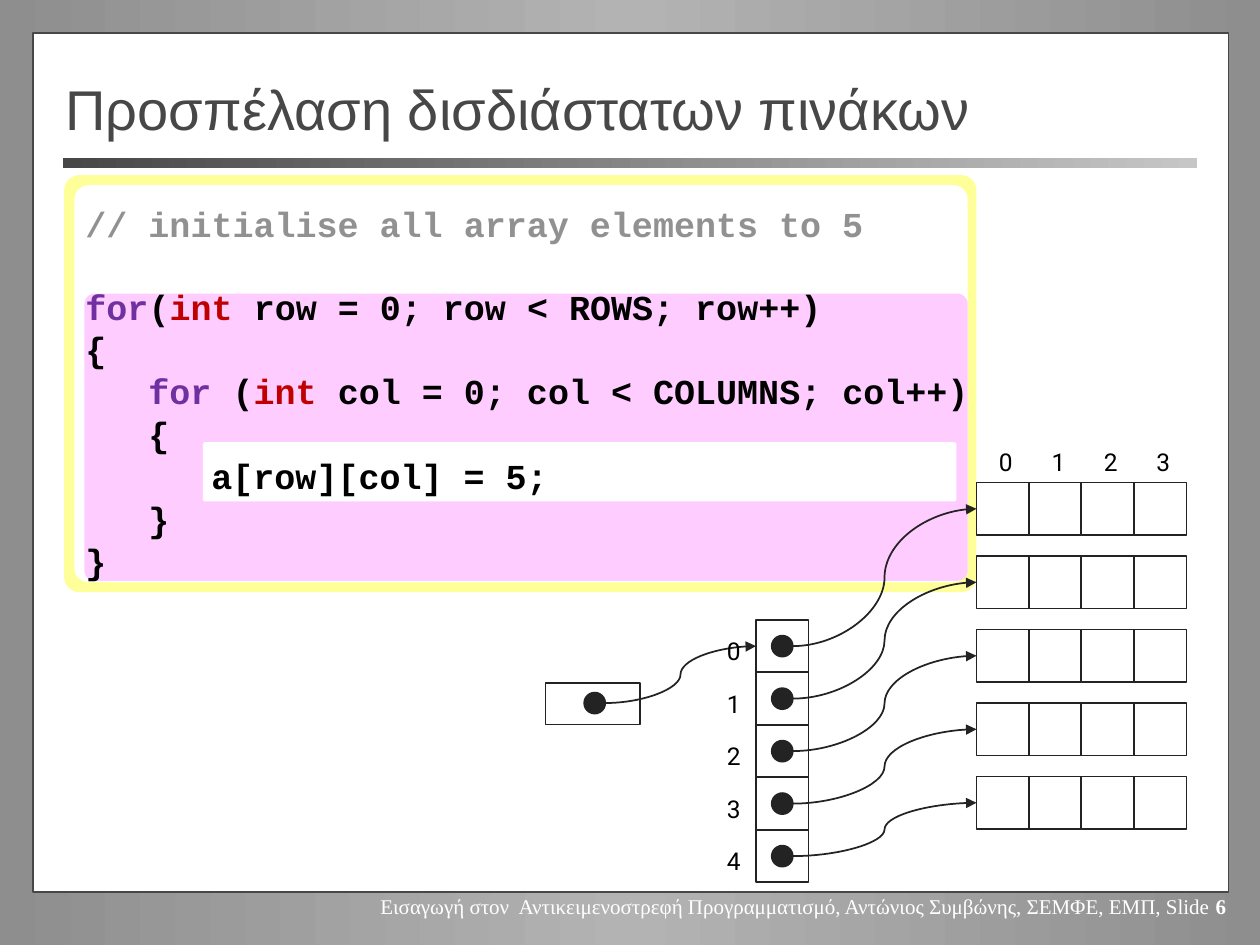
from copy import deepcopy

from lxml.etree import SubElement
from pptx import Presentation
from pptx.dml.color import RGBColor
from pptx.enum.shapes import MSO_CONNECTOR, MSO_SHAPE as SHAPE
from pptx.enum.text import MSO_ANCHOR, MSO_AUTO_SIZE, PP_ALIGN
from pptx.oxml.ns import qn
from pptx.util import Inches, Pt

COLORS = {
    "white": "FFFFFF", "black": "000000", "edge": "8E8E8E", "middle": "B3B3B3",
    "dark": "474747", "light": "C6C6C6", "ink": "232323",
    "yellow": "FFFF99", "pink": "FFCCFF",
    "comment": "919191", "keyword": "7030A0", "type": "C00000",
}
CELL = 5 / 12  # side of a memory cell
ROWS, COLS = 5, 4

# Code lines: indent level, space before in points, (text, colour) runs
CODE = [
    (0, 5, [("// initialise all array elements to 5", "comment")]),
    (0, 28.2, [("for", "keyword"), ("(", "black"), ("int", "type"),
               (" row = 0; row < ROWS; row++)", "black")]),
    (0, 5, [("{", "black")]),
    (1, 5, [("for", "keyword"), (" (", "black"), ("int", "type"),
            (" col = 0; col < COLUMNS; col++)", "black")]),
    (1, 5, [("{", "black")]),
    (2, 5, [("a[row][col] = 5;", "black")]),
    (1, 5, [("}", "black")]),
    (0, 5, [("}", "black")]),
]


def rgb(name):
    return RGBColor.from_string(COLORS[name])


def set_gradient(fill, names):
    fill.gradient()
    fill.gradient_angle = 0
    first = fill.gradient_stops[0]._gs
    for _ in names[2:]:
        first.getparent().append(deepcopy(first))
    for i, (stop, name) in enumerate(zip(fill.gradient_stops, names)):
        stop.position = i / (len(names) - 1)
        stop.color.rgb = rgb(name)


def add_box(s, x, y, w, h, fill=None, line=None, kind=SHAPE.RECTANGLE, radius=None):
    sp = s.shapes.add_shape(kind, Inches(x), Inches(y), Inches(w), Inches(h))
    sp.shadow.inherit = False
    if radius is not None:
        sp.adjustments[0] = radius
    if fill:
        sp.fill.solid()
        sp.fill.fore_color.rgb = rgb(fill)
    else:
        sp.fill.background()
    if line:
        sp.line.color.rgb = rgb(line)
        sp.line.width = Pt(1)
    else:
        sp.line.fill.background()
    return sp


def add_text(s, x, y, w, h, wrap=True):
    tf = s.shapes.add_textbox(Inches(x), Inches(y), Inches(w), Inches(h)).text_frame
    tf.word_wrap = wrap
    tf.auto_size = MSO_AUTO_SIZE.SHAPE_TO_FIT_TEXT
    return tf


def set_font(font, name, size, color=None, bold=None):
    font.name, font.size, font.bold = name, Pt(size), bold
    if color:
        font.color.rgb = rgb(color)


def add_index(s, x, y, number):
    p = add_text(s, x, y, 0.31, 0.33, wrap=False).paragraphs[0]
    p.text = str(number)
    p.space_before = Pt(2.8)
    set_font(p.font, "Roboto", 14, "black")


def add_pointer(s, x, y, end_x, end_y):
    """Dot centred on (x, y) with a curved arrow to the end point."""
    r = 1 / 12
    c = s.shapes.add_connector(MSO_CONNECTOR.CURVE, Inches(x + r), Inches(y),
                               Inches(end_x), Inches(end_y))
    c.line.color.rgb = rgb("ink")
    c.line.width = Pt(1)
    SubElement(c.line._get_or_add_ln(), qn("a:tailEnd"), type="triangle")
    SubElement(c._element.spPr, qn("a:effectLst"))
    add_box(s, x - r, y - r, 2 * r, 2 * r, "ink", "ink", SHAPE.OVAL)


def build_frame(s, x, y, w, h):
    set_gradient(s.background.fill, ["edge", "middle", "edge"])
    add_box(s, x, y, w, h, "white", "dark")
    bar = add_box(s, 0.5, y + 0.99, 9, 0.08)
    set_gradient(bar.fill, ["dark", "light"])
    # Footer
    p = add_text(s, 2.79, 7.04, 7.04, 0.3).paragraphs[0]
    p.alignment = PP_ALIGN.RIGHT
    set_font(p.font, "Times New Roman", 12, "white")
    p.add_run().text = ("Εισαγωγή στον  Αντικειμενοστρεφή Προγραμματισμό, "
                        "Αντώνιος Συμβώνης, ΣΕΜΦΕ, ΕΜΠ, Slide ")
    number = p.add_run()
    number.text = "6"
    number.font.bold = True


def build_title(s, x, y, w, h):
    title = s.shapes.title
    title.left, title.top = Inches(x), Inches(y)
    title.width, title.height = Inches(w), Inches(h)
    s.shapes._spTree.append(title._element)  # in front of the frame
    tf = title.text_frame
    tf.text = "Προσπέλαση δισδιάστατων πινάκων"
    tf.vertical_anchor = MSO_ANCHOR.MIDDLE
    tf.auto_size = MSO_AUTO_SIZE.NONE
    p = tf.paragraphs[0]
    p.alignment = PP_ALIGN.LEFT
    set_font(p.font, "Arial", 32, "dark")


def build_code(s, x, y, w, h):
    # Nested panels: border, page, outer loop, inner statement
    for dx, dy, pw, ph, fill in [
        (0, 0, w, h, "yellow"),
        (0.08, 0.08, w - 0.15, h - 0.16, "white"),
        (0.16, 0.94, w - 0.23, 2.28, "pink"),
        (1.1, 2.12, 5.98, 0.47, "white"),
    ]:
        add_box(s, x + dx, y + dy, pw, ph, fill, kind=SHAPE.ROUNDED_RECTANGLE, radius=0.036)
    tf = add_text(s, x + 0.07, y + 0.23, 7.67, 3.08)
    for i, (level, before, runs) in enumerate(CODE):
        p = tf.add_paragraph() if i else tf.paragraphs[0]
        p.line_spacing, p.space_before = 0.8, Pt(before)
        p._p.get_or_add_pPr().set("marL", str(Inches(0.5 * level)))
        set_font(p.font, "Courier New", 20, bold=True)
        for text, color in runs:
            r = p.add_run()
            r.text = text
            r.font.color.rgb = rgb(color)


def build_memory(s, x, y):
    """Array variable, column of row pointers, and the rows themselves."""
    half = CELL / 2
    pointers_x, pointers_y = x + 1.67, y + 1.42
    rows_x, rows_y, row_step = x + 3.42, y + 0.33, 7 / 12
    # Array variable
    add_box(s, x, y + 1.92, 0.75, 0.33, line="ink")
    for i in range(ROWS):
        add_box(s, pointers_x, pointers_y + i * CELL, CELL, CELL, line="ink")
    add_pointer(s, x + 0.39, y + 2.08, pointers_x, pointers_y + half)
    # Rows with their pointers
    for i in range(ROWS):
        cell_y, row_y = pointers_y + i * CELL, rows_y + i * row_step
        add_index(s, pointers_x - 0.33, cell_y + 0.08, i)
        add_pointer(s, pointers_x + half, cell_y + half, rows_x, row_y + half)
        for j in range(COLS):
            add_box(s, rows_x + j * CELL, row_y, CELL, CELL, "white", "ink")
    # Column indexes
    for j in range(COLS):
        add_index(s, rows_x + 0.08 + j * CELL, y, j)


def main():
    prs = Presentation()
    prs.slide_width, prs.slide_height = Inches(10), Inches(7.5)
    s = prs.slides.add_slide(prs.slide_layouts[5])
    build_frame(s, 0.26, 0.26, 9.49, 6.82)
    build_code(s, 0.51, 1.39, 7.24, 3.31)
    build_title(s, 0.42, 0.55, 9.33, 0.62)
    build_memory(s, 4.33, 3.5)
    prs.save("out.pptx")


if __name__ == "__main__":
    main()
